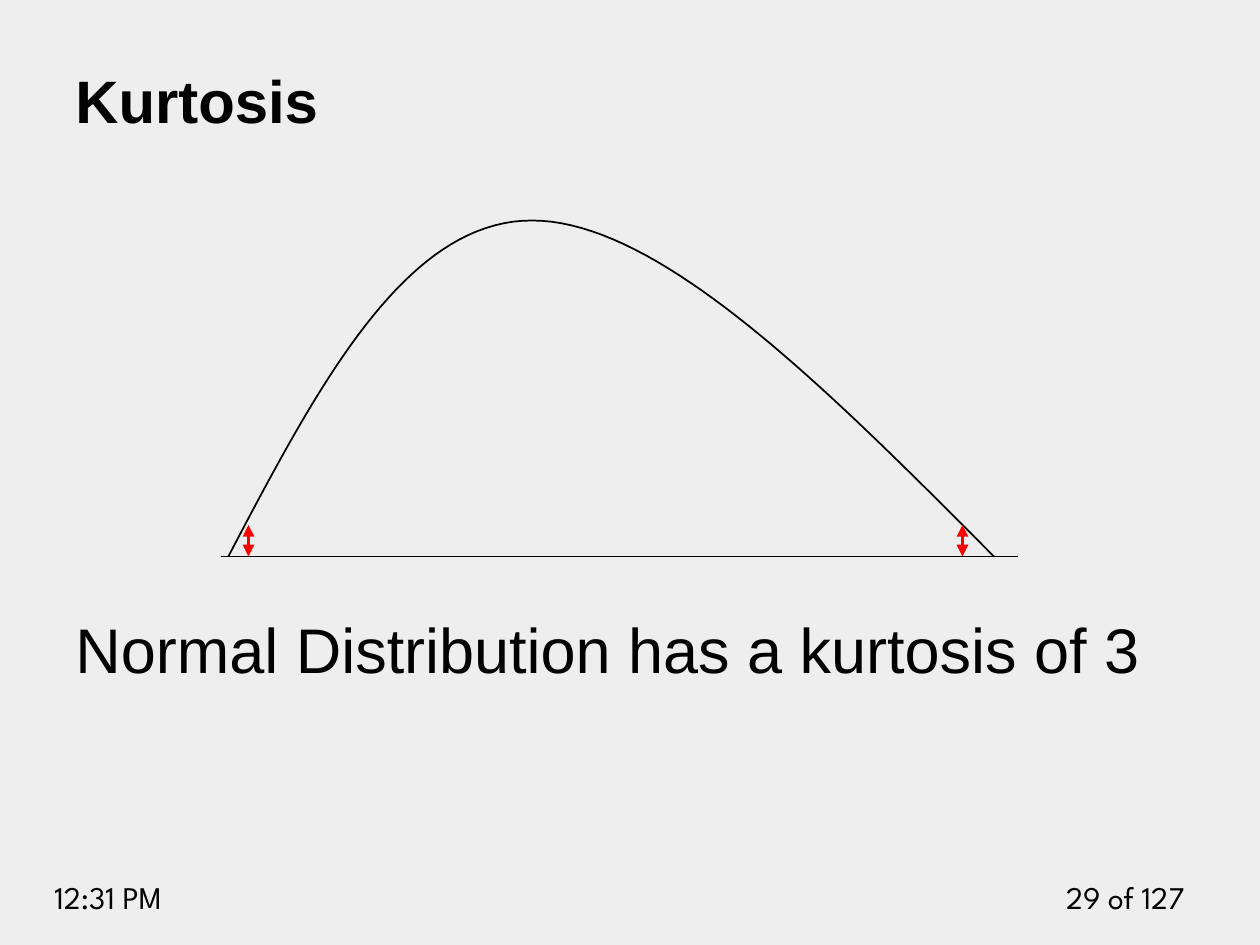
import pptx
import pptx.util
import pptx.dml.color
import pptx.enum.shapes
import pptx.enum.text
import pptx.oxml.ns
from lxml import etree

Pt = pptx.util.Pt
RGBColor = pptx.dml.color.RGBColor
ALIGN = pptx.enum.text.PP_ALIGN

BACKGROUND = RGBColor(0xEE, 0xEE, 0xEE)
BLACK = RGBColor(0, 0, 0)
RED = RGBColor(0xFF, 0, 0)

BASELINE_Y = 318
# Bezier segments of the distribution curve, joined at the peak
CURVE = [
    [(130.5, BASELINE_Y), (181, 222), (231, 126), (304, 126)],
    [(304, 126), (377, 126), (472.5, 222), (568, BASELINE_Y)],
]
CURVE_STEPS = 40


def add_text(s, text, left, top, width, height, size=18, font="Arial",
             bold=False, align=ALIGN.LEFT):
    sp = s.shapes.add_textbox(Pt(left), Pt(top), Pt(width), Pt(height))
    tf = sp.text_frame
    tf.word_wrap = True
    p = tf.paragraphs[0]
    p.alignment = align
    r = p.add_run()
    r.text = text
    r.font.name = font
    r.font.size = Pt(size)
    r.font.bold = bold
    r.font.color.rgb = BLACK


def add_line(s, x1, y1, x2, y2, color=BLACK, width=1, arrows=False):
    line = s.shapes.add_connector(
        pptx.enum.shapes.MSO_CONNECTOR.STRAIGHT, Pt(x1), Pt(y1), Pt(x2), Pt(y2))
    line.line.color.rgb = color
    line.line.width = Pt(width)
    qn = pptx.oxml.ns.qn
    if arrows:
        ln = line.line._get_or_add_ln()
        for end in ("a:headEnd", "a:tailEnd"):
            etree.SubElement(ln, qn(end), type="triangle")
    etree.SubElement(line._element.spPr, qn("a:effectLst"))


def bezier_point(points, t):
    weights = ((1 - t) ** 3, 3 * t * (1 - t) ** 2, 3 * t ** 2 * (1 - t), t ** 3)
    return tuple(Pt(sum(w * p[axis] for w, p in zip(weights, points)))
                 for axis in (0, 1))


def add_curve(s, segments):
    start = bezier_point(segments[0], 0)
    builder = s.shapes.build_freeform(*start)
    builder.add_line_segments(
        [bezier_point(seg, i / CURVE_STEPS)
         for seg in segments for i in range(1, CURVE_STEPS + 1)], close=False)
    sp = builder.convert_to_shape()
    sp.shadow.inherit = False
    sp.fill.background()
    sp.line.color.rgb = BLACK
    sp.line.width = Pt(1)


def main():
    prs = pptx.Presentation()
    prs.slide_width, prs.slide_height = Pt(720), Pt(540)
    s = prs.slides.add_slide(prs.slide_layouts[6])
    s.background.fill.solid()
    s.background.fill.fore_color.rgb = BACKGROUND

    # Footer
    add_text(s, "29 of 127", 558, 498, 126, 29, font="League Spartan",
             align=ALIGN.RIGHT)
    add_text(s, "12:31 PM", 24, 498, 114, 29, font="League Spartan")

    # Title and statement
    add_text(s, "Kurtosis", 36, 33, 648, 47, size=34.2, bold=True)
    add_text(s, "Normal Distribution has a kurtosis of 3", 36, 345.5, 648, 49,
             size=36)

    # Distribution curve on its axis
    add_line(s, 126, BASELINE_Y, 582, BASELINE_Y)
    add_curve(s, CURVE)

    # Tail height markers
    for x in (142, 550):
        add_line(s, x, BASELINE_Y - 18, x, BASELINE_Y, color=RED, width=2.25,
                 arrows=True)

    prs.save("out.pptx")


if __name__ == "__main__":
    main()
